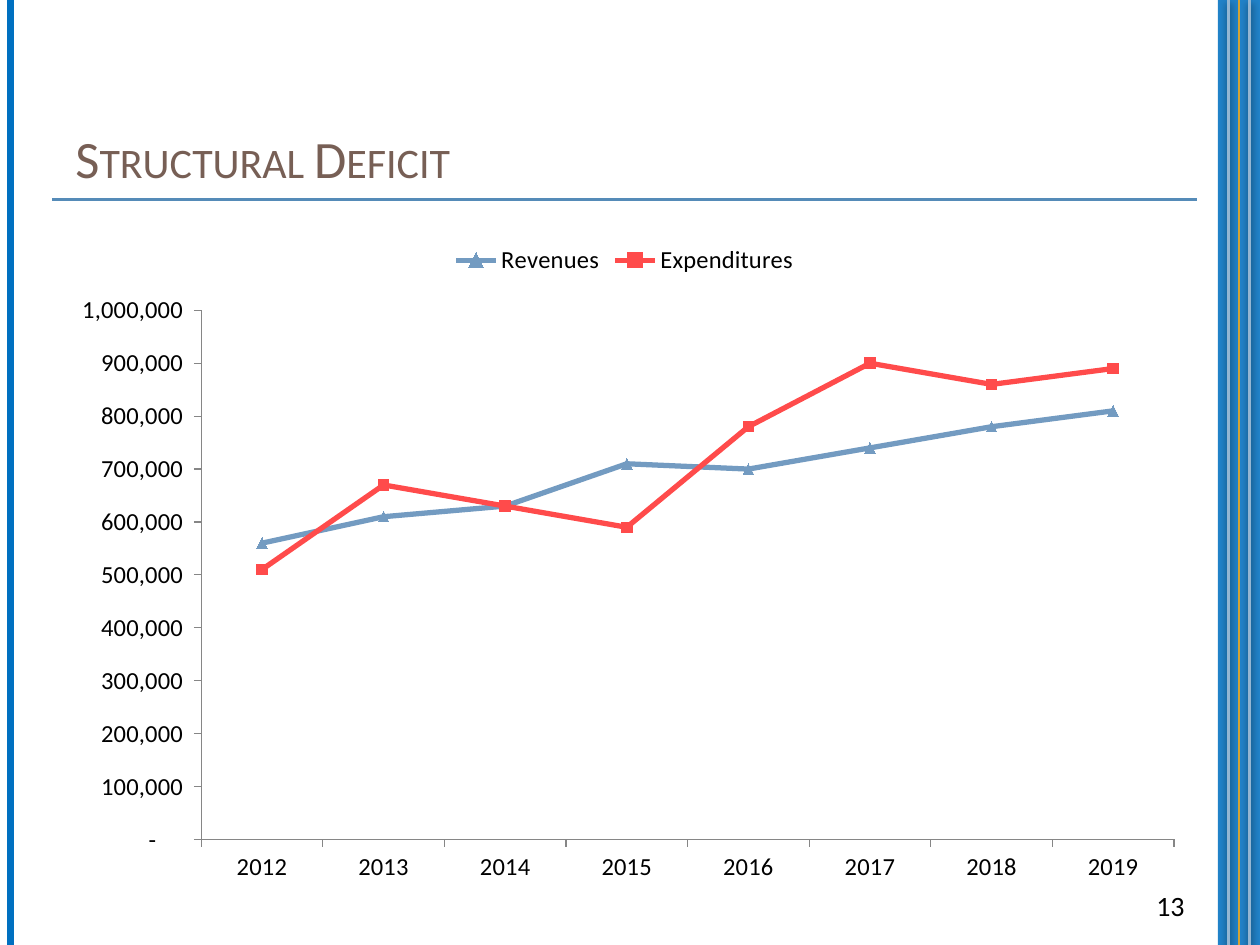
from lxml import etree
from pptx import Presentation, util as u
from pptx.chart.data import CategoryChartData
from pptx.dml.color import RGBColor
from pptx.enum import chart as ch, shapes, text
from pptx.oxml import parse_xml
from pptx.oxml.ns import nsdecls, qn

COLORS = {
    "blue": "0070C0", "pale": "94B6D2", "gold": "D4A334", "rule": "558BB8",
    "title": "775F55", "text": "000000", "axis": "868686",
    "revenues": "739BC1", "expenditures": "FF4B4B",
}
FONT = "Calibri"
COLUMNS, ROWS = 120, 90  # square grid cells of 1/12 inch
YEARS = [str(year) for year in range(2012, 2020)]
SERIES = {
    "Revenues": (560000, 610000, 630000, 710000, 700000, 740000, 780000, 810000),
    "Expenditures": (510000, 670000, 630000, 590000, 780000, 900000, 860000, 890000),
}
MARKERS = {
    "Revenues": ch.XL_MARKER_STYLE.TRIANGLE,
    "Expenditures": ch.XL_MARKER_STYLE.SQUARE,
}
PLOT_AREA = {"x": 0.13, "y": 0.12, "w": 0.85, "h": 0.8}
NUMBER_FORMAT = '_(* #,##0_);_(* \\(#,##0\\);_(* "-"??_);_('


def color(name):
    return RGBColor.from_string(COLORS[name])


def cells(*counts):
    return [u.Inches(count / 12) for count in counts]


def set_attributes(target, **values):
    for name, value in values.items():
        setattr(target, name, value)


def add_line(slide, start, end, color_name, width, shadow=False):
    line = slide.shapes.add_connector(
        shapes.MSO_CONNECTOR.STRAIGHT, *cells(*start, *end))
    line.line.color.rgb = color(color_name)
    line.line.width = u.Pt(width)
    effects = etree.SubElement(line._element.spPr, qn("a:effectLst"))
    if shadow:
        effects.append(parse_xml(
            f'<a:outerShdw {nsdecls("a")} blurRad="{u.Pt(4)}" dist="{u.Pt(2)}" '
            'dir="5400000" rotWithShape="0"><a:srgbClr val="000000">'
            '<a:alpha val="40000"/></a:srgbClr></a:outerShdw>'))


def add_band(slide, box, color_name, opacity):
    band = slide.shapes.add_shape(shapes.MSO_SHAPE.RECTANGLE, *cells(*box))
    band.shadow.inherit = False
    band.fill.solid()
    band.fill.fore_color.rgb = color(color_name)
    band.line.fill.background()
    fill_color = band._element.spPr.find(qn("a:solidFill"))[0]
    etree.SubElement(fill_color, qn("a:alpha"), val=str(opacity * 1000))


def add_text(slide, box, words, size, color_name, alignment, anchor, small_caps=False):
    frame = slide.shapes.add_textbox(*cells(*box)).text_frame
    set_attributes(frame, word_wrap=True, vertical_anchor=anchor)
    paragraph = frame.paragraphs[0]
    paragraph.alignment = alignment
    run = paragraph.add_run()
    run.text = words
    set_attributes(run.font, name=FONT, size=u.Pt(size))
    run.font.color.rgb = color(color_name)
    if small_caps:
        run.font._element.set("cap", "small")


def fix_plot_area(chart):
    """Place the inside of the axes at fixed shares of the chart's size."""
    plot_area = chart._chartSpace.chart.plotArea
    for layout in plot_area.findall(qn("c:layout")):
        plot_area.remove(layout)
    parts = "".join(f'<c:{key} val="{share}"/>' for key, share in PLOT_AREA.items())
    plot_area.insert(0, parse_xml(
        f'<c:layout {nsdecls("c")}><c:manualLayout><c:layoutTarget val="inner"/>'
        f'<c:xMode val="edge"/><c:yMode val="edge"/>{parts}'
        '</c:manualLayout></c:layout>'))


def add_line_chart(slide, box):
    data = CategoryChartData()
    data.categories = YEARS
    for name, values in SERIES.items():
        data.add_series(name, values)
    chart = slide.shapes.add_chart(
        ch.XL_CHART_TYPE.LINE_MARKERS, *cells(*box), data).chart
    set_attributes(chart, has_title=False, has_legend=True)
    set_attributes(chart.font, name=FONT, size=u.Pt(14))
    chart.font.color.rgb = color("text")
    set_attributes(chart.legend, position=ch.XL_LEGEND_POSITION.TOP,
                   include_in_layout=False)
    chart.plots[0].vary_by_categories = False

    for axis in (chart.category_axis, chart.value_axis):
        set_attributes(axis, has_major_gridlines=False,
                       major_tick_mark=ch.XL_TICK_MARK.OUTSIDE)
        axis.format.line.color.rgb = color("axis")
    set_attributes(chart.value_axis, minimum_scale=0, maximum_scale=1000000,
                   major_unit=100000)
    set_attributes(chart.value_axis.tick_labels, number_format=NUMBER_FORMAT,
                   number_format_is_linked=False)

    for series in chart.plots[0].series:
        series_color = color(series.name.lower())
        series.smooth = False
        set_attributes(series.format.line, width=u.Pt(3))
        series.format.line.color.rgb = series_color
        set_attributes(series.marker, style=MARKERS[series.name], size=6)
        series.marker.format.fill.solid()
        series.marker.format.fill.fore_color.rgb = series_color
        series.marker.format.line.color.rgb = series_color
    fix_plot_area(chart)


def add_vertical(slide, column, color_name, width, shadow=False):
    add_line(slide, (column, 0), (column, ROWS), color_name, width, shadow)


def main():
    presentation = Presentation()
    width, height = cells(COLUMNS, ROWS)
    set_attributes(presentation, slide_width=width, slide_height=height)
    slide = presentation.slides.add_slide(presentation.slide_layouts[6])

    add_vertical(slide, 1, "blue", 4.5)
    add_vertical(slide, 118, "pale", 1.5)
    add_band(slide, (116, 0, 4, ROWS), "blue", 87)
    add_vertical(slide, 118, "gold", 1)
    for column in (117, 119):
        add_vertical(slide, column, "pale", 2, shadow=True)
    add_line(slide, (5, 19), (114, 19), "rule", 2.25)

    add_text(slide, (6, 3.6, 81, 15), "Structural Deficit", 30, "title",
             text.PP_ALIGN.LEFT, text.MSO_ANCHOR.BOTTOM, small_caps=True)
    add_text(slide, (102, 84, 12, 6), "13", 16, "text",
             text.PP_ALIGN.RIGHT, text.MSO_ANCHOR.TOP)
    add_line_chart(slide, (5, 22, 109, 63))
    presentation.save("out.pptx")


if __name__ == "__main__":
    main()
